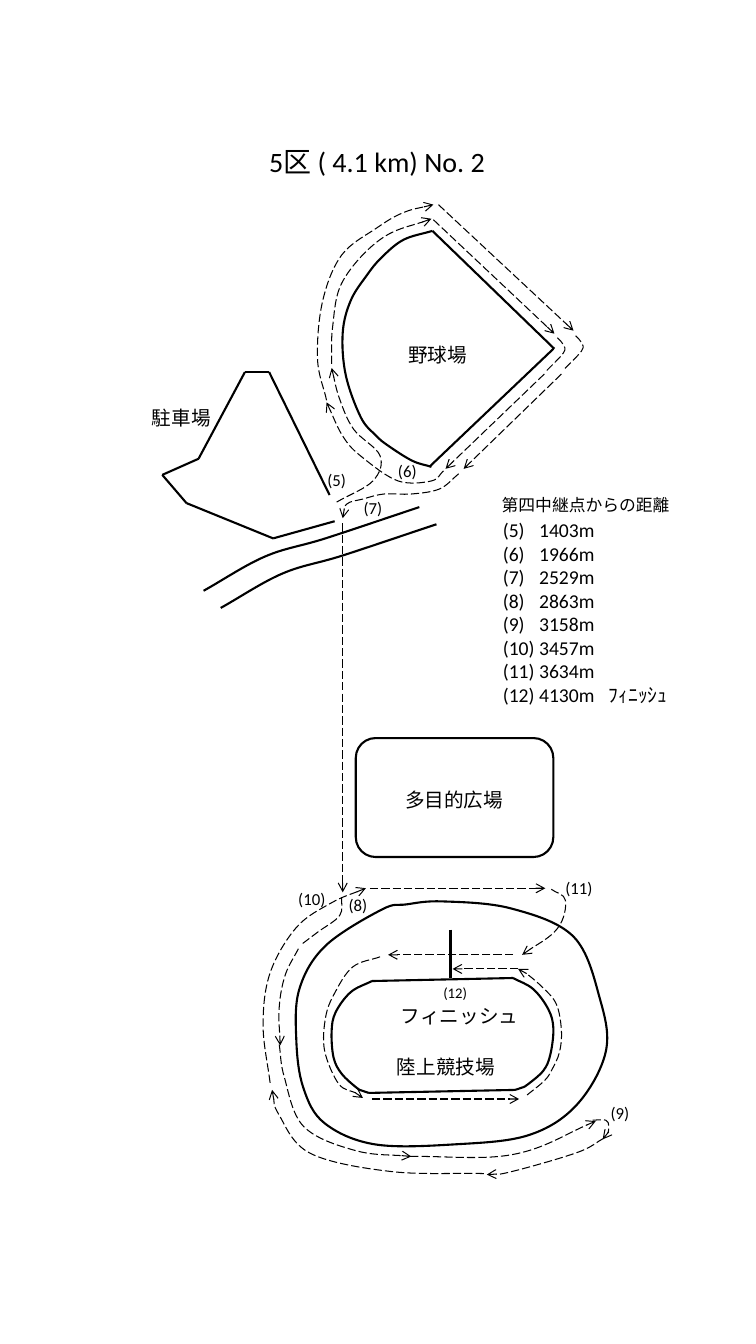
from copy import deepcopy
from itertools import pairwise

from lxml.etree import SubElement
from pptx import Presentation
from pptx.dml.color import RGBColor
from pptx.enum.dml import MSO_LINE
from pptx.enum.shapes import MSO_CONNECTOR, MSO_SHAPE
from pptx.enum.text import MSO_ANCHOR, PP_ALIGN
from pptx.oxml.ns import qn
from pptx.util import Inches, Pt

COLORS = {"ink": "000000"}
FONT = "Calibri"
DISTANCES = [
    "(5)\t1403m", "(6)\t1966m", "(7)\t2529m", "(8)\t2863m",
    "(9)\t3158m", "(10)\t3457m", "(11)\t3634m", "(12)\t4130m\tﾌｨﾆｯｼｭ",
]


def ink():
    return RGBColor.from_string(COLORS["ink"])


def style_line(shape, route, arrow):
    shape.line.color.rgb = ink()
    shape.line.width = Pt(0.75 if route else 1.5)
    if route:
        shape.line.dash_style = MSO_LINE.LONG_DASH
    if arrow:
        outline = shape.element.spPr.find(qn("a:ln"))
        SubElement(outline, qn("a:tailEnd"), type="arrow")


def style_text(para, size):
    para.font.name = FONT
    para.font.size = Pt(size)
    para.font.color.rgb = ink()


def smooth(shape, closed):
    path = next(shape.element.iter(qn("a:path")))
    knots = [(int(p.get("x")), int(p.get("y"))) for p in path.iter(qn("a:pt"))]
    last = len(knots) - 1

    def slope(i):
        if closed and i in (0, last):
            before, after, share = knots[-2], knots[1], 6
        elif i in (0, last):
            before, after, share = knots[max(i - 1, 0)], knots[min(i + 1, last)], 3
        else:
            before, after, share = knots[i - 1], knots[i + 1], 6
        return [(b - a) / share for a, b in zip(before, after)]

    for i, segment in enumerate(path.findall(qn("a:lnTo"))):
        segment.tag = qn("a:cubicBezTo")
        for place, (knot, sign) in enumerate(((i, 1), (i + 1, -1))):
            handle = deepcopy(segment[-1])
            for axis, start, step in zip("xy", knots[knot], slope(knot)):
                handle.set(axis, str(round(start + sign * step)))
            segment.insert(place, handle)


class Region:
    def __init__(self, page, left, top):
        self.shapes, self.left, self.top = page.shapes, left, top

    def at(self, x, y):
        return Inches(self.left + x), Inches(self.top + y)

    def curve(self, knots, route=False, arrow=False, closed=False):
        points = [self.at(*knot) for knot in knots]
        if closed:
            points.append(points[0])
        builder = self.shapes.build_freeform(*points[0])
        builder.add_line_segments(points[1:], close=closed)
        shape = builder.convert_to_shape()
        shape.shadow.inherit = False
        shape.fill.background()
        style_line(shape, route, arrow)
        smooth(shape, closed)

    def line(self, start, end, route=False, arrow=False):
        connector = self.shapes.add_connector(
            MSO_CONNECTOR.STRAIGHT, *self.at(*start), *self.at(*end))
        style_line(connector, route, arrow)
        SubElement(connector.element.spPr, qn("a:effectLst"))

    def label(self, text, x, y, width, size=14, align=PP_ALIGN.LEFT, tabs=()):
        lines = text.split("\n")
        height = Inches(0.1 + len(lines) * size * 1.2 / 72)
        frame = self.shapes.add_textbox(*self.at(x, y), Inches(width), height).text_frame
        frame.word_wrap = True
        frame.text = text
        for para in frame.paragraphs:
            para.alignment = align
            style_text(para, size)
            if tabs:
                stops = SubElement(para._p.pPr, qn("a:tabLst"))
                para._p.pPr.insert(0, stops)
                for stop in tabs:
                    SubElement(stops, qn("a:tab"), pos=str(Inches(stop)), algn="l")


def add_title(page, left, top):
    title = page.shapes.title
    title.left, title.top = Inches(left), Inches(top)
    title.width, title.height = Inches(2.54), Inches(0.44)
    frame = title.text_frame
    frame.text = "5区 ( 4.1 km) No. 2"
    frame.vertical_anchor = MSO_ANCHOR.TOP
    frame.paragraphs[0].alignment = PP_ALIGN.LEFT
    style_text(frame.paragraphs[0], 20)


def add_parking(page, left, top):
    area = Region(page, left, top)
    border = [(2.27, 1.91), (1.67, 0.69), (1.43, 0.69), (0.97, 1.55),
              (0.61, 1.71), (0.85, 1.99), (1.71, 2.34), (2.32, 2.17)]
    for start, end in pairwise(border):
        area.line(start, end)
    road = [(1.02, 2.86), (1.63, 2.52), (2.23, 2.34), (3.16, 2.03)]
    for dx, dy in ((0, 0), (0.17, 0.17)):
        area.curve([(x + dx, y + dy) for x, y in road])
    area.label("駐車場", 0.41, 0.98, 0.87)


def add_ballpark(page, left, top):
    area = Region(page, left, top)
    area.curve([(1.29, 0.29), (1, 0.38), (0.78, 0.56), (0.64, 0.73), (0.48, 0.98),
                (0.4, 1.3), (0.43, 1.72), (0.58, 2.14), (0.73, 2.32), (0.85, 2.42),
                (1.09, 2.57), (1.28, 2.63)])
    area.line((1.29, 0.29), (2.5, 1.46))
    area.line((1.26, 2.63), (2.49, 1.46))
    area.label("野球場", 0.95, 1.35, 0.87)

    routes = [
        [(0.34, 2.98), (0.7, 2.77), (0.77, 2.52), (0.51, 2.26), (0.37, 1.96), (0.29, 1.65)],
        [(0.29, 1.61), (0.3, 1.24), (0.4, 0.79), (0.78, 0.37), (1.28, 0.17)],
        [(1.4, 2.67), (1.28, 2.77), (0.95, 2.77), (0.6, 2.54), (0.41, 2.34), (0.24, 1.99)],
        [(0.24, 1.97), (0.15, 1.56), (0.2, 0.99), (0.39, 0.53), (0.74, 0.26),
         (1, 0.11), (1.3, 0.03)],
        [(1.55, 2.7), (1.36, 2.85), (1.08, 2.9), (0.81, 2.9), (0.6, 2.95),
         (0.44, 3), (0.4, 3.14)],
    ]
    for route in routes:
        area.curve(route, route=True, arrow=True)
    corner = [(2.53, 1.35), (2.59, 1.42), (2.59, 1.5), (2.41, 1.69)]
    for dx, dy in ((0, 0), (0.18, -0.02)):
        area.curve([(x + dx, y + dy) for x, y in corner], route=True)
    for start, end in (((1.3, 0.18), (2.5, 1.31)), ((2.4, 1.71), (1.42, 2.65)),
                       ((1.35, 0.03), (2.69, 1.28)), ((2.57, 1.71), (1.6, 2.65))):
        area.line(start, end, route=True, arrow=True)
    for text, x, y in (("(5)", 0.15, 2.61), ("(6)", 0.85, 2.52), ("(7)", 0.51, 2.89)):
        area.label(text, x, y, 0.47, 12)


def add_plaza(page, left, top):
    area = Region(page, left, top)
    plaza = page.shapes.add_shape(MSO_SHAPE.FLOWCHART_ALTERNATE_PROCESS,
                                  *area.at(0.53, 2.32), Inches(1.96), Inches(1.18))
    plaza.shadow.inherit = False
    plaza.fill.background()
    style_line(plaza, False, False)
    area.label("多目的広場", 0.92, 2.77, 1.21)
    area.line((0.4, 0.19), (0.4, 3.85), route=True, arrow=True)


def add_stadium(page, left, top):
    area = Region(page, left, top)
    area.curve([(2.39, 0.94), (3.07, 1.01), (3.69, 1.29), (3.95, 1.9), (4.01, 2.43),
                (3.72, 2.96), (3.24, 3.26), (2.51, 3.35), (1.72, 3.35), (1.22, 3.14),
                (1.01, 2.79), (0.94, 2.32), (0.97, 1.81), (1.23, 1.38), (1.79, 1.02),
                (2.03, 0.97)], closed=True)
    area.curve([(3.09, 1.7), (3.29, 1.81), (3.44, 2.01), (3.49, 2.2), (3.46, 2.46),
                (3.39, 2.62), (3.23, 2.76), (3.17, 2.79), (3.11, 2.81)])
    area.curve([(1.69, 1.73), (1.48, 1.84), (1.33, 2.04), (1.29, 2.23), (1.31, 2.49),
                (1.39, 2.65), (1.54, 2.79), (1.6, 2.82), (1.66, 2.84)])
    for start, end in (((1.69, 1.73), (3.09, 1.7)), ((1.66, 2.84), (3.11, 2.81)),
                       ((2.47, 1.22), (2.47, 1.7))):
        area.line(start, end)

    area.curve([(1.39, 0.9), (1.37, 1.08), (1.16, 1.24), (1, 1.36)], route=True)
    routes = [
        [(0.96, 1.41), (0.83, 1.67), (0.77, 1.99), (0.78, 2.37)],
        [(0.77, 2.36), (0.82, 2.68), (1.01, 3.17), (1.52, 3.41), (2.08, 3.47)],
        [(2.07, 3.47), (3.09, 3.45), (3.91, 3.12)],
        [(3.88, 3.11), (4.01, 3.11), (4.04, 3.17), (4.02, 3.28), (3.98, 3.3)],
        [(3.99, 3.29), (3.73, 3.43), (3.08, 3.62), (2.83, 3.65)],
        [(2.8, 3.64), (1.88, 3.62), (1.08, 3.44), (0.77, 3.06), (0.7, 2.81)],
        [(0.68, 2.74), (0.61, 2.17), (0.68, 1.65), (0.94, 1.2), (1.28, 0.96), (1.63, 0.81)],
        [(3.47, 0.82), (3.61, 0.93), (3.53, 1.21), (3.18, 1.47)],
        [(1.77, 1.49), (1.5, 1.59), (1.32, 1.85), (1.23, 2.09), (1.22, 2.42),
         (1.36, 2.75), (1.53, 2.84), (1.6, 2.89)],
        [(3.23, 2.86), (3.4, 2.72), (3.47, 2.62), (3.55, 2.44), (3.57, 2.22),
         (3.52, 1.96), (3.38, 1.79), (3.19, 1.63), (3.14, 1.61)],
    ]
    for route in routes:
        area.curve(route, route=True, arrow=True)
    for start, end in (((1.67, 0.81), (3.41, 0.81)), ((3.09, 1.47), (1.85, 1.47)),
                       ((3.14, 1.61), (2.49, 1.61)), ((1.69, 2.9), (3.15, 2.9))):
        area.line(start, end, route=True, arrow=True)
    for text, x, y in (("(8)", 1.36, 0.83), ("(9)", 3.96, 2.89),
                       ("(10)", 0.86, 0.77), ("(11)", 3.51, 0.66)):
        area.label(text, x, y, 0.48, 12)
    area.label("(12)", 2.3, 1.71, 0.47, 10.5)
    area.label("フィニッシュ", 1.88, 1.91, 1.4)
    area.label("陸上競技場", 1.84, 2.41, 1.34)


def add_distances(page, left, top):
    area = Region(page, left, top)
    area.label("第四中継点からの距離", 0, 0, 2.14, 12, PP_ALIGN.CENTER)
    area.label("\n".join(DISTANCES), 0.15, 0.23, 1.96, tabs=(0.36, 1.05))


def main():
    deck = Presentation()
    deck.slide_width, deck.slide_height = Inches(7.5), Inches(13.33)
    page = deck.slides.add_slide(deck.slide_layouts[5])
    add_title(page, 2.57, 1.38)
    add_parking(page, 1, 3)
    add_ballpark(page, 3, 2)
    add_plaza(page, 3, 5)
    add_stadium(page, 2, 8)
    add_distances(page, 4.74, 4.86)
    deck.save("out.pptx")


if __name__ == "__main__":
    main()
